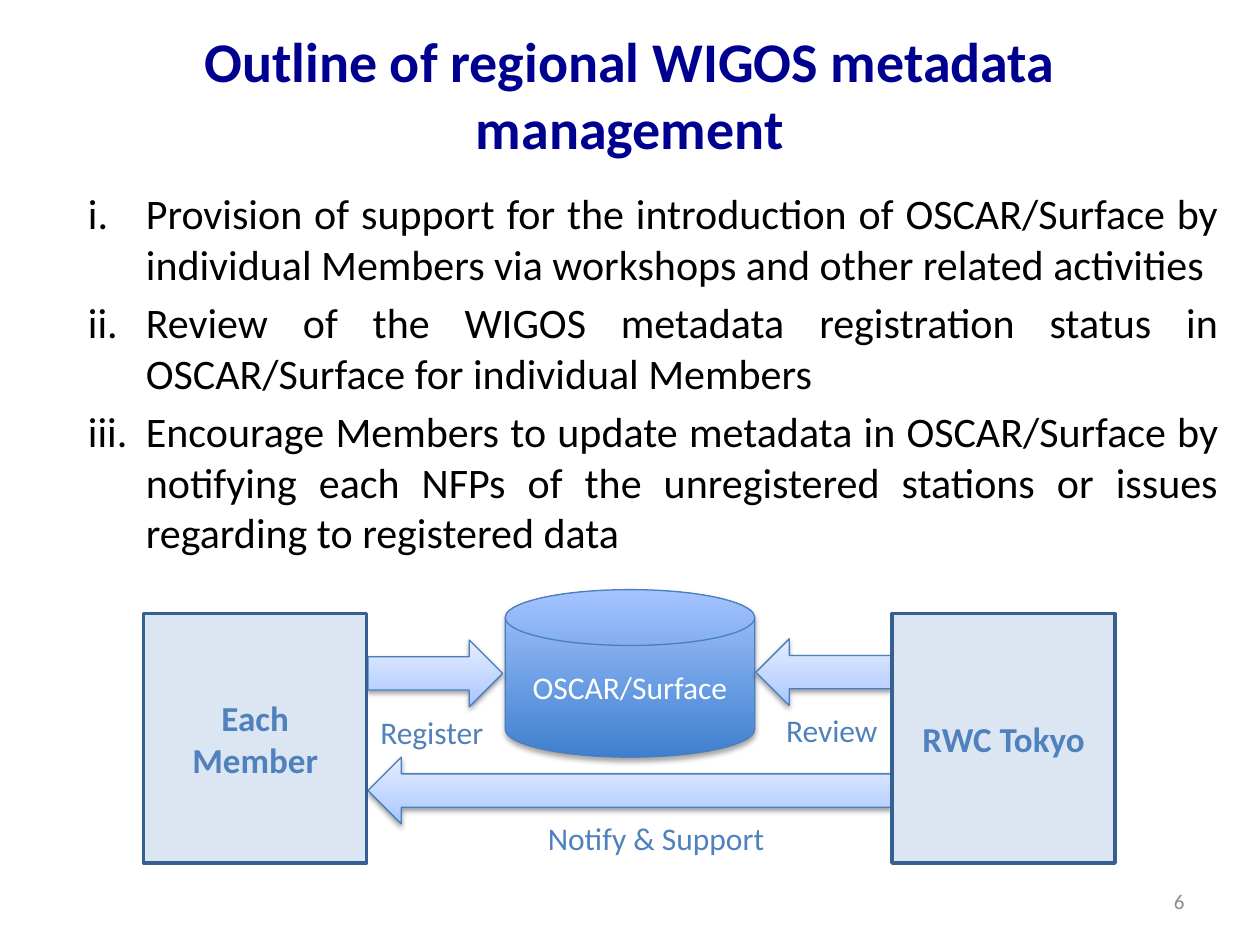
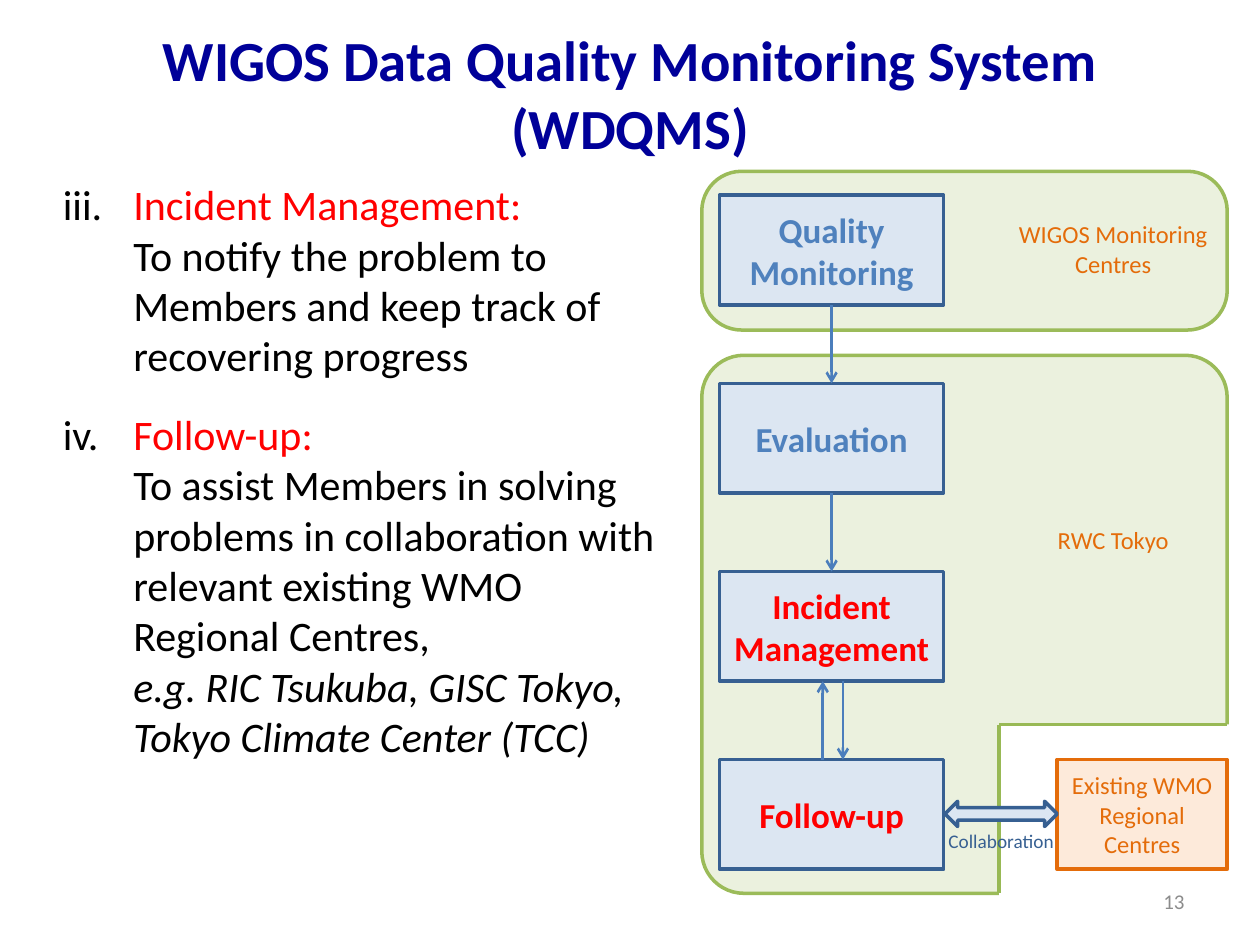
import copy

import lxml.etree
import pptx
import pptx.dml.color
import pptx.enum.shapes
import pptx.enum.text
import pptx.oxml.ns
import pptx.util

SHAPE = pptx.enum.shapes.MSO_SHAPE
ALIGN = pptx.enum.text.PP_ALIGN
ANCHOR = pptx.enum.text.MSO_ANCHOR

# Grid of 100 columns by 75 rows on a 10 x 7.5 inch page
WIDTH, HEIGHT = pptx.util.Inches(10), pptx.util.Inches(7.5)
COLUMN, ROW = WIDTH / 100, HEIGHT / 75

FONT = "Calibri"
BLACK, WHITE, RED, GREY = "000000", "FFFFFF", "FF0000", "8C8C8C"
BLUE, DARK_BLUE, PALE_BLUE, EDGE_BLUE = "4F81BD", "376092", "DCE6F2", "4B7EBC"
ORANGE, PALE_ORANGE = "E46C0A", "FDEADA"
GREEN, PALE_GREEN, NOTCH_GREEN = "9BBB59", "EBF1DE", "98B955"
DISK_GRADIENT = [(0, "3F80CE"), (1, "A4C4FF")]
ARROW_GRADIENT = [(0, "A4C4FF"), (0.35, "BFD4FF"), (1, "E6EEFF")]


def rgb(color):
    return pptx.dml.color.RGBColor.from_string(color)


def place(left, top, width, height):
    """Turn columns and rows into lengths."""
    return [round(length) for length in
            (left * COLUMN, top * ROW, width * COLUMN, height * ROW)]


def add_element(parent, tag, **attributes):
    element = lxml.etree.SubElement(parent, pptx.oxml.ns.qn(tag))
    for name, value in attributes.items():
        element.set(name, str(value))
    return element


# Text

def number_paragraph(para, start, indent):
    """Give a paragraph a lower-case Roman number and a hanging indent."""
    properties = para._p.get_or_add_pPr()
    properties.set("marL", str(round(7.5 * COLUMN)))
    properties.set("indent", str(round(-indent * COLUMN)))
    color = add_element(properties, "a:buClr")
    add_element(color, "a:srgbClr", val=BLACK)
    add_element(properties, "a:buFont", typeface=FONT)
    add_element(properties, "a:buAutoNum", type="romanLcPeriod", startAt=start)


def write_text(shape, paragraphs, size=20, color=BLACK, bold=False, align=ALIGN.CENTER,
               anchor=ANCHOR.MIDDLE, wrap=True, start=None, indent=0, gap=0):
    """Fill a shape; each paragraph is a list of lines (text, color, italic) or a string."""
    frame = shape.text_frame
    frame.word_wrap = wrap
    frame.vertical_anchor = anchor
    if isinstance(paragraphs, str):
        paragraphs = [paragraphs]
    for index, lines in enumerate(paragraphs):
        para = frame.add_paragraph() if index else frame.paragraphs[0]
        para.alignment = align
        if index:
            para.space_before = pptx.util.Pt(gap)
        if start:
            number_paragraph(para, start, indent)
        if isinstance(lines, str):
            lines = [(lines, color, False)]
        for position, (text, line_color, italic) in enumerate(lines):
            if position:
                para.add_line_break()
            span = para.add_run()
            span.text = text
            span.font.name = FONT
            span.font.size = pptx.util.Pt(size)
            span.font.bold = bold
            span.font.italic = italic
            span.font.color.rgb = rgb(line_color)


def add_text(page, area, paragraphs, **text_format):
    write_text(page.shapes.add_textbox(*place(*area)), paragraphs, **text_format)


def add_title(page, text, size, color):
    add_text(page, (5, 1.15, 90, 12.5), text, size=size, color=color, bold=True)


def add_page_number(page, number):
    add_text(page, (71.7, 69.5, 23.3, 4), str(number), size=12, color=GREY, align=ALIGN.RIGHT)


# Shapes

def add_box(page, area, fill, edge=None, weight=2, kind=SHAPE.RECTANGLE):
    box = page.shapes.add_shape(kind, *place(*area))
    box.shadow.inherit = False
    box.fill.solid()
    box.fill.fore_color.rgb = rgb(fill)
    if edge:
        box.line.color.rgb = rgb(edge)
        box.line.width = pptx.util.Pt(weight)
    else:
        box.line.fill.background()
    return box


def add_step(page, area, text, color=BLUE):
    box = add_box(page, area, PALE_BLUE, DARK_BLUE)
    write_text(box, text, color=color, bold=True)
    return box


def add_zone(page, area, rounding):
    zone = add_box(page, area, PALE_GREEN, GREEN, kind=SHAPE.ROUNDED_RECTANGLE)
    zone.adjustments[0] = rounding


def add_glossy(page, kind, area, gradient, distance, opacity):
    """Add a shape with an upward gradient and a soft shadow below it."""
    shape = add_box(page, area, WHITE, EDGE_BLUE, 0.75, kind)
    shape.fill.gradient()
    shape.fill.gradient_angle = 90
    stop_list = shape._element.spPr.find(".//" + pptx.oxml.ns.qn("a:gsLst"))
    for _ in gradient[2:]:
        stop_list.append(copy.deepcopy(stop_list[0]))
    for stop, (position, color) in zip(shape.fill.gradient_stops, gradient):
        stop.position = position
        stop.color.rgb = rgb(color)
    effects = shape._element.spPr.find(pptx.oxml.ns.qn("a:effectLst"))
    shadow = add_element(effects, "a:outerShdw", blurRad=40000, dist=pptx.util.Pt(distance),
                         dir=90 * 60000, rotWithShape=0)
    tint = add_element(shadow, "a:srgbClr", val=BLACK)
    add_element(tint, "a:alpha", val=opacity * 1000)
    return shape


def add_line(page, start, end, color, weight, arrow=False):
    points = place(*start, *end)
    line = page.shapes.add_connector(pptx.enum.shapes.MSO_CONNECTOR.STRAIGHT, *points)
    line.line.color.rgb = rgb(color)
    line.line.width = pptx.util.Pt(weight)
    if arrow:
        add_element(line.line._get_or_add_ln(), "a:tailEnd", type="arrow")
    add_element(line._element.spPr, "a:effectLst")
    return line


# Slides

def build_outline(page):
    add_title(page, "Outline of regional WIGOS metadata management", 32, "000090")
    add_text(page, (3.1, 14.4, 94.6, 37.3), [
        "Provision of support for the introduction of OSCAR/Surface by individual Members "
        "via workshops and other related activities",
        "Review of the WIGOS metadata registration status in OSCAR/Surface for individual Members",
        "Encourage Members to update metadata in OSCAR/Surface by notifying each NFPs of the "
        "unregistered stations or issues regarding to registered data",
    ], size=24, align=ALIGN.JUSTIFY, anchor=ANCHOR.TOP, start=1, indent=4.6, gap=4.8)

    # Database between the two parties
    disk = add_glossy(page, SHAPE.FLOWCHART_MAGNETIC_DISK, (40.1, 46.8, 19.8, 13.3),
                      DISK_GRADIENT, 1.8, 35)
    write_text(disk, "OSCAR/Surface", size=18, color=WHITE)

    # Labelled flows
    flows = [
        (SHAPE.RIGHT_ARROW, (29.2, 50.8, 10.7, 5.3), "Register", (29.2, 56.1, 10.3, 4)),
        (SHAPE.LEFT_ARROW, (60, 50.7, 10.7, 5.3), "Review", (61.4, 55.9, 9.4, 4)),
        (SHAPE.LEFT_ARROW, (29.2, 60.1, 41.5, 5.3), "Notify & Support", (42.5, 64.5, 19.4, 4)),
    ]
    for kind, area, label, label_area in flows:
        add_glossy(page, kind, area, ARROW_GRADIENT, 1.6, 38)
        add_text(page, label_area, label, size=18, color=BLUE, align=ALIGN.LEFT,
                 anchor=ANCHOR.TOP, wrap=False)

    # Parties
    for left, name in ((11.4, "Each Member"), (70.8, "RWC Tokyo")):
        add_step(page, (left, 48.7, 17.7, 19.8), name)
    add_page_number(page, 6)


def build_monitoring(page):
    add_title(page, "WIGOS Data Quality Monitoring System (WDQMS)", 32.4, "000099")
    add_text(page, (2.1, 13.7, 52.5, 57.6), [
        [("Incident Management:", RED, False),
         ("To notify the problem to Members and keep track of recovering progress", BLACK, False)],
        [("Follow-up:", RED, False),
         ("To assist Members in solving problems in collaboration with relevant existing WMO "
          "Regional Centres,", BLACK, False),
         ("e.g. RIC Tsukuba, GISC Tokyo, Tokyo Climate Center (TCC)", BLACK, True)],
    ], size=24, align=ALIGN.LEFT, anchor=ANCHOR.TOP, start=3, indent=5.6, gap=16)

    # Zones of responsibility, the lower one with a notch
    add_zone(page, (55.7, 13.6, 41.7, 12.6), 0.25)
    add_zone(page, (55.7, 28.2, 41.7, 42.7), 0.08)
    notch = (79.3, 57.5)
    add_box(page, (*notch, 20.3, 14.3), WHITE)
    for end in ((97.4, 57.5), (79.3, 70.9)):
        add_line(page, notch, end, NOTCH_GREEN, 2)

    # Chain of steps
    left, top, width, height, pitch = 57.1, 15.5, 17.8, 8.7, 14.93
    names = [("Quality Monitoring", BLUE), ("Evaluation", BLUE),
             ("Incident Management", RED), ("Follow-up", RED)]
    steps = [add_step(page, (left, top + row * pitch, width, height), name, color)
             for row, (name, color) in enumerate(names)]
    middle = left + width / 2
    for upper, lower in zip(steps[:2], steps[1:3]):
        arrow = add_line(page, (middle, top), (middle, top + pitch), EDGE_BLUE, 1.5, arrow=True)
        arrow.begin_connect(upper, 2)
        arrow.end_connect(lower, 0)
    incident_bottom, follow_up_top = top + 2 * pitch + height, top + 3 * pitch
    add_line(page, (66.9, incident_bottom), (66.9, follow_up_top), EDGE_BLUE, 1.5, arrow=True)
    add_line(page, (65.3, follow_up_top), (65.3, incident_bottom), EDGE_BLUE, 1.5, arrow=True)

    # Collaboration with other centres
    centres = add_box(page, (83.9, follow_up_top, 13.5, height), PALE_ORANGE, ORANGE)
    write_text(centres, "Existing WMO Regional Centres", size=14, color=ORANGE)
    add_box(page, (75, 63.6, 8.9, 2), PALE_BLUE, DARK_BLUE, kind=SHAPE.LEFT_RIGHT_ARROW)
    add_text(page, (73.7, 65.3, 11.5, 2.9), "Collaboration", size=11, color=DARK_BLUE,
             anchor=ANCHOR.TOP)

    # Zone names
    for zone_top, zone_height, name in ((15.3, 8.9, "WIGOS Monitoring Centres"),
                                        (30.4, 24.9, "RWC Tokyo")):
        add_text(page, (79.3, zone_top, 18.1, zone_height), name, size=14, color=ORANGE)
    add_page_number(page, 13)


def main():
    deck = pptx.Presentation()
    deck.slide_width, deck.slide_height = WIDTH, HEIGHT
    blank = deck.slide_layouts[6]
    for build in (build_outline, build_monitoring):
        build(deck.slides.add_slide(blank))
    deck.save("out.pptx")


if __name__ == "__main__":
    main()
